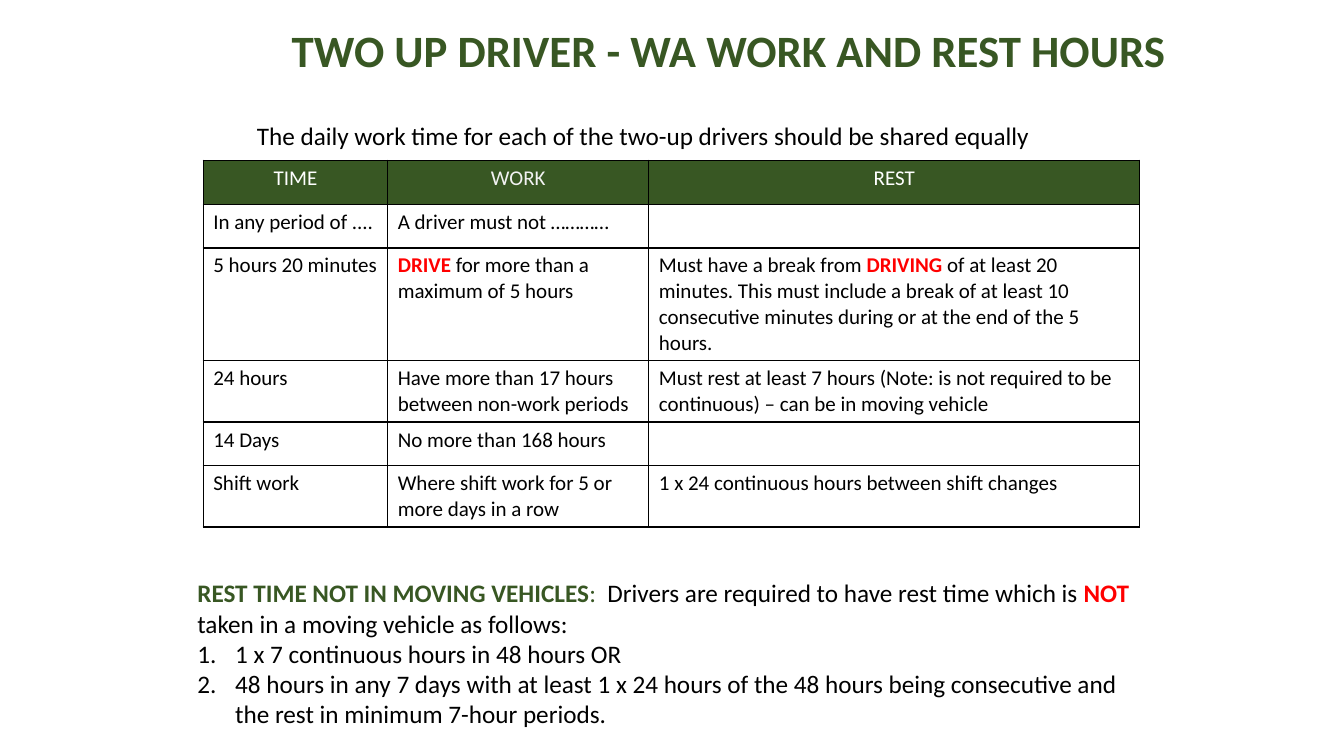
from lxml import etree
from pptx import Presentation
from pptx.dml.color import RGBColor
from pptx.enum.text import MSO_ANCHOR as Anchor, MSO_AUTO_SIZE as AutoSize, PP_ALIGN as Align
from pptx.oxml.ns import qn
from pptx.util import Pt

# Content: a text is a list of (words, style) runs
FONT = "Calibri"
GREEN, RED, BLACK, WHITE, PALE = "385723", "FF0000", "000000", "FFFFFF", "F2F2F2"
PLAIN, HEADING, WARNING = (BLACK, False), (GREEN, True), (RED, True)

TITLE = [("TWO UP DRIVER - WA WORK AND REST HOURS", HEADING)]
INTRO = [("The daily work time for each of the two-up drivers should be shared equally", PLAIN)]
HEADERS = [("TIME", WHITE), ("WORK", PALE), ("REST", WHITE)]
RULES = [
    ("In any period of ....", "A driver must not …………", ""),
    ("5 hours 20 minutes",
     [("DRIVE", WARNING), (" for more than a maximum of 5 hours", PLAIN)],
     [("Must have a break from ", PLAIN), ("DRIVING", WARNING),
      (" of at least 20 minutes. This must include a break of at least 10 "
       "consecutive minutes during or at the end of the 5 hours.", PLAIN)]),
    ("24 hours", "Have more than 17 hours between non-work periods",
     "Must rest at least 7 hours (Note: is not required to be continuous) – can be in moving vehicle"),
    ("14 Days", "No more than 168 hours", ""),
    ("Shift work", "Where shift work for 5 or more days in a row",
     "1 x 24 continuous hours between shift changes"),
]
REST_NOTE = [
    ("REST TIME NOT IN MOVING VEHICLES", HEADING), (":  ", (GREEN, False)),
    ("Drivers are required to have rest time which is ", PLAIN),
    ("NOT ", WARNING), ("taken in a moving vehicle as follows:", PLAIN),
]
REST_OPTIONS = [
    "1 x 7 continuous hours in 48 hours OR",
    "48 hours in any 7 days with at least 1 x 24 hours of the 48 hours being "
    "consecutive and the rest in minimum 7-hour periods.",
]

# Layout in points
TITLE_BOX = (162, 15.8, 678, 44.6)
INTRO_BOX = (176.4, 82.1, 607, 29)
NOTE_BOX = (133.9, 409, 692, 116.6)
TABLE_LEFT, TABLE_TOP = 145.2, 114.5
COLUMN_WIDTHS = [131.8, 186.5, 350.6]
ROW_HEIGHTS = [31.3, 31.3, 80.7, 43.7, 31.3, 43.7]
TABLE_SIZE, BODY_SIZE, TITLE_SIZE = 15, 18, 32
LIST_INDENT = 27


def color(hex_code):
    return RGBColor.from_string(hex_code)


def write(paragraph, runs, size, align=Align.LEFT):
    if isinstance(runs, str):
        runs = [(runs, PLAIN)] if runs else []
    paragraph.alignment = align
    paragraph.font.name, paragraph.font.size = FONT, Pt(size)
    for words, (hex_code, bold) in runs:
        run = paragraph.add_run()
        run.text = words
        run.font.bold = bold
        run.font.color.rgb = color(hex_code)


def add_text(slide, box, runs, size, align=Align.LEFT):
    frame = slide.shapes.add_textbox(*map(Pt, box)).text_frame
    frame.word_wrap = True
    write(frame.paragraphs[0], runs, size, align)
    return frame


def number(paragraph):
    properties = paragraph._p.get_or_add_pPr()
    properties.set("marL", str(Pt(LIST_INDENT)))
    properties.set("indent", str(-Pt(LIST_INDENT)))
    etree.SubElement(properties, qn("a:buFont"), typeface="+mj-lt")
    etree.SubElement(properties, qn("a:buAutoNum"), type="arabicPeriod")
    # Default run properties must stay last of these children
    properties.append(properties.find(qn("a:defRPr")))


def add_borders(cell):
    properties = cell._tc.get_or_add_tcPr()
    for index, side in enumerate(("lnL", "lnR", "lnT", "lnB")):
        line = etree.Element(qn(f"a:{side}"), w=str(Pt(1)))
        fill = etree.SubElement(line, qn("a:solidFill"))
        etree.SubElement(fill, qn("a:srgbClr"), val=BLACK)
        properties.insert(index, line)


def add_rules_table(slide):
    header = [[(words, (hex_code, False))] for words, hex_code in HEADERS]
    rows = [header, *RULES]
    table = slide.shapes.add_table(
        len(rows), len(HEADERS), Pt(TABLE_LEFT), Pt(TABLE_TOP),
        Pt(sum(COLUMN_WIDTHS)), Pt(sum(ROW_HEIGHTS))).table
    table.horz_banding = False
    for column, width in zip(table.columns, COLUMN_WIDTHS):
        column.width = Pt(width)
    for row_index, (row, height) in enumerate(zip(rows, ROW_HEIGHTS)):
        table.rows[row_index].height = Pt(height)
        is_header = row_index == 0
        for column_index, runs in enumerate(row):
            cell = table.cell(row_index, column_index)
            cell.fill.solid()
            cell.fill.fore_color.rgb = color(GREEN if is_header else WHITE)
            add_borders(cell)
            write(cell.text_frame.paragraphs[0], runs, TABLE_SIZE,
                  Align.CENTER if is_header else Align.LEFT)


def main():
    presentation = Presentation()
    presentation.slide_width, presentation.slide_height = Pt(960), Pt(540)
    slide = presentation.slides.add_slide(presentation.slide_layouts[6])

    # Title and table
    title = add_text(slide, TITLE_BOX, TITLE, TITLE_SIZE, Align.RIGHT)
    title.vertical_anchor = Anchor.MIDDLE
    title.paragraphs[0].line_spacing = 0.9
    add_rules_table(slide)
    intro = add_text(slide, INTRO_BOX, INTRO, BODY_SIZE)
    intro.auto_size = AutoSize.SHAPE_TO_FIT_TEXT

    # Rest note with its numbered options
    note = add_text(slide, NOTE_BOX, REST_NOTE, BODY_SIZE)
    note.auto_size = AutoSize.SHAPE_TO_FIT_TEXT
    for option in REST_OPTIONS:
        paragraph = note.add_paragraph()
        write(paragraph, option, BODY_SIZE)
        number(paragraph)

    presentation.save("out.pptx")


if __name__ == "__main__":
    main()
